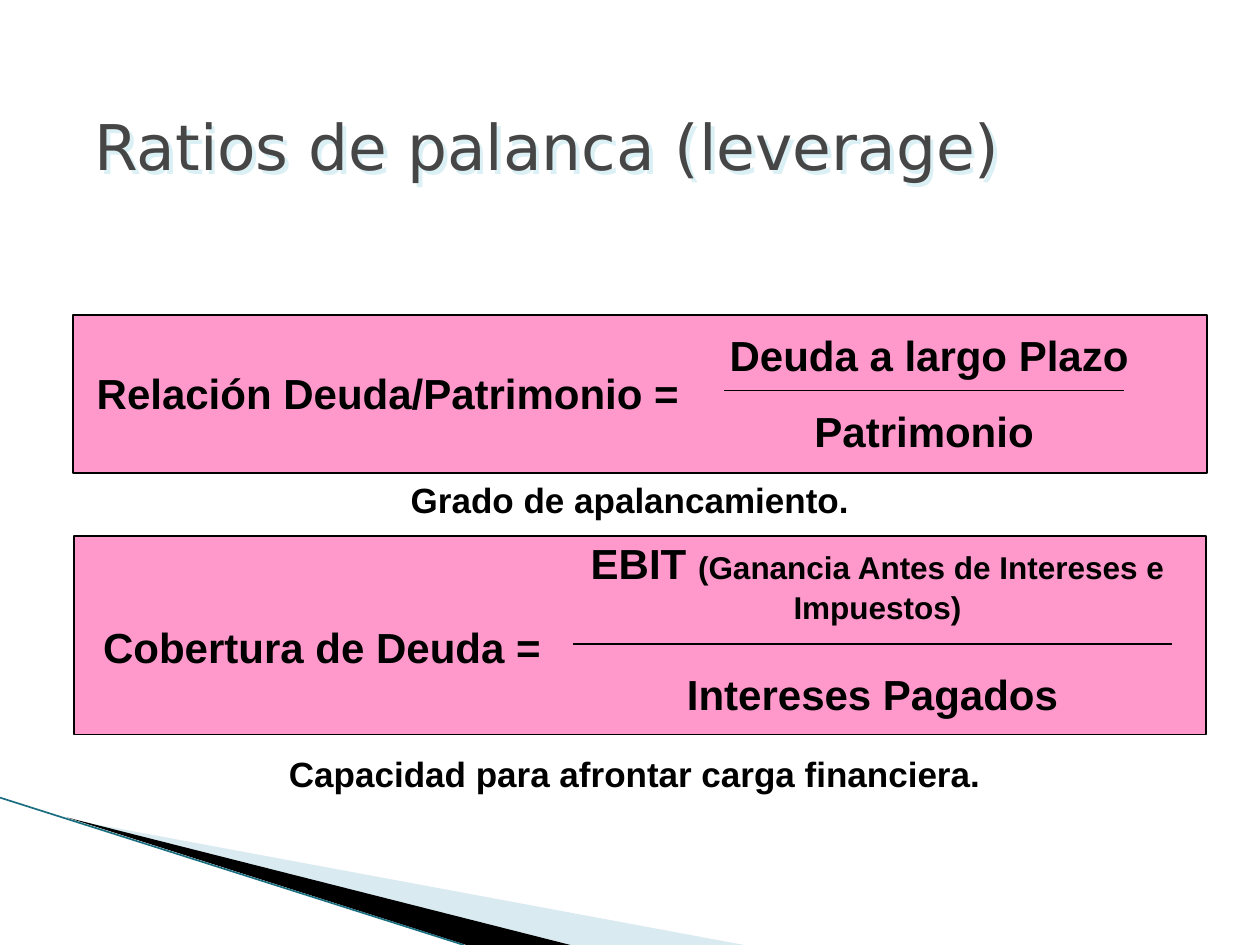
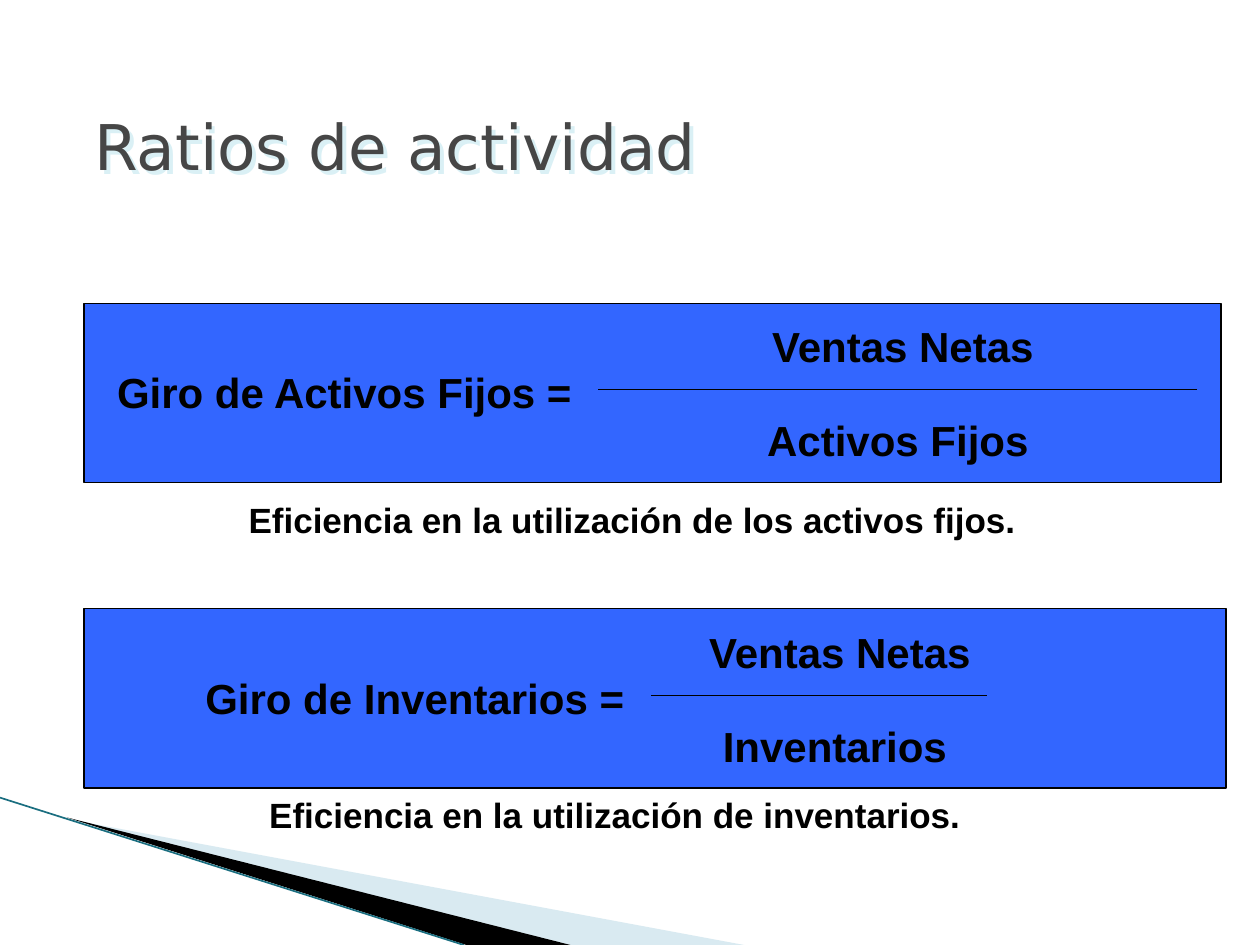
from lxml.etree import SubElement as Sub
from pptx import Presentation
from pptx.dml.color import RGBColor as RGB
from pptx.enum.shapes import MSO_CONNECTOR as LINK, MSO_SHAPE as SHAPE
from pptx.enum.text import MSO_ANCHOR as ANCHOR, MSO_AUTO_SIZE as AUTO, PP_ALIGN as ALIGN
from pptx.oxml.ns import qn
from pptx.util import Cm, Pt

BLACK = RGB(0, 0, 0)
GREY = RGB(0x46, 0x46, 0x46)
PINK = RGB(0xFF, 0x99, 0xCC)
BLUE = RGB(0x33, 0x66, 0xFF)
PALE = RGB(0xA0, 0xCB, 0xDC)
TEAL = RGB(0x1A, 0x6E, 0x80)
GLOW = "DAF0F5"

# Content, lengths in cm: card (left, top, width, height), bar (from, to, y),
# label left edge, fraction centre, rise and drop of its parts from the bar,
# note centre and top
SLIDES = [
    {"title": "Ratios de palanca (leverage)", "fill": PINK, "ratios": [
        {"label": "Relación Deuda/Patrimonio =", "left": 1.7,
         "over": [("Deuda a largo Plazo", 24)], "under": "Patrimonio",
         "card": (1.47, 6.35, 22.86, 3.18), "bar": (14.6, 22.66, 7.87),
         "mid": 18.73, "rise": 1.35, "drop": 0.18,
         "note": "Grado de apalancamiento.", "spot": (12.7, 9.53)},
        {"label": "Cobertura de Deuda =", "left": 1.83,
         "over": [("EBIT ", 24), ("(Ganancia Antes de Intereses e Impuestos)", 18)],
         "under": "Intereses Pagados",
         "card": (1.5, 10.8, 22.81, 4.01), "bar": (11.56, 23.62, 12.98),
         "mid": 17.69, "rise": 2.26, "drop": 0.38,
         "note": "Capacidad para afrontar carga financiera.", "spot": (12.8, 15.04)},
    ]},
    {"title": "Ratios de actividad", "fill": BLUE, "ratios": [
        {"label": "Giro de Activos Fijos =", "left": 2.11,
         "over": [("Ventas Netas", 24)], "under": "Activos Fijos",
         "card": (1.7, 6.12, 22.91, 3.61), "bar": (12.06, 24.13, 7.85),
         "mid": 18.2, "rise": 1.52, "drop": 0.38,
         "note": "Eficiencia en la utilización de los activos fijos.",
         "spot": (12.75, 9.93)},
        {"label": "Giro de Inventarios =", "left": 3.89,
         "over": [("Ventas Netas", 24)], "under": "Inventarios",
         "card": (1.7, 12.27, 23.01, 3.61), "bar": (13.13, 19.89, 14.02),
         "mid": 16.93, "rise": 1.52, "drop": 0.38,
         "note": "Eficiencia en la utilización de inventarios.",
         "spot": (12.4, 15.88)},
    ]},
]
WEDGES = [
    (PALE, 40, [(1.4, 16.52), (15.0, 19.05), (11.5, 19.05)]),
    (BLACK, 100, [(1.35, 16.48), (11.5, 19.05), (9.4, 19.05)]),
]
EDGE = (0, 16.08, 9.35, 19.05)
TITLE = (1.65, 0.74, 23.11, 3.07)
FRAC_W, LABEL_W, NOTE_W = 12.27, 13.3, 22
LABEL_UP = 0.58  # label top above the bar
SHIFT = 0.1      # lower part sits slightly left of the upper one


def write(frame, runs, align=ALIGN.LEFT, font="Arial", color=BLACK, bold=True, space=None):
    """Fill a text frame with one paragraph of (text, size) runs."""
    frame.word_wrap = True
    para = frame.paragraphs[0]
    para.alignment = align
    if space:
        para.line_spacing = space
    for text, size in runs:
        run = para.add_run()
        run.text = text
        run.font.name, run.font.size, run.font.bold = font, Pt(size), bold
        run.font.color.rgb = color


def label(slide, runs, x, y, w, **style):
    box = slide.shapes.add_textbox(Cm(x), Cm(y), Cm(w), Cm(1.27))
    write(box.text_frame, runs, **style)


def centred(slide, runs, mid, y, w):
    label(slide, runs, mid - w / 2, y, w, align=ALIGN.CENTER)


def rule(slide, x1, y1, x2, y2, color, width):
    line = slide.shapes.add_connector(LINK.STRAIGHT, Cm(x1), Cm(y1), Cm(x2), Cm(y2))
    line.line.color.rgb = color
    line.line.width = Pt(width)
    Sub(line.element.spPr, qn("a:effectLst"))
    return line


def wedge(slide, color, alpha, points):
    (x, y), *rest = [(Cm(a), Cm(b)) for a, b in points]
    path = slide.shapes.build_freeform(x, y)
    path.add_line_segments(rest)
    shape = path.convert_to_shape()
    shape.shadow.inherit = False
    shape.line.fill.background()
    shape.fill.solid()
    shape.fill.fore_color.rgb = color
    tint = shape.element.spPr.find(".//" + qn("a:srgbClr"))
    Sub(tint, qn("a:alpha"), val=str(alpha * 1000))
    return shape


def decorate(slide, layout):
    """Build the corner bands and hand them to the shared layout."""
    parts = [wedge(slide, *item) for item in WEDGES]
    parts.append(rule(slide, *EDGE, TEAL, 0.95))
    for part in parts:
        layout.shapes.element.append(part.element)


def head(slide, text):
    title = slide.shapes.title
    frame = title.text_frame
    frame.auto_size = AUTO.NONE
    frame.vertical_anchor = ANCHOR.BOTTOM
    write(frame, [(text, 36)], font="DejaVu Sans", color=GREY, bold=False, space=0.8)
    glow = Sub(Sub(title.element.spPr, qn("a:effectLst")), qn("a:outerShdw"),
               dist="38100", dir="2700000", algn="tl")
    Sub(glow, qn("a:srgbClr"), val=GLOW)


def card(slide, place, fill):
    box = slide.shapes.add_shape(SHAPE.RECTANGLE, *map(Cm, place))
    box.shadow.inherit = False
    box.fill.solid()
    box.fill.fore_color.rgb = fill
    box.line.color.rgb = BLACK
    box.line.width = Pt(1)


def ratio(slide, item, fill):
    start, end, y = item["bar"]
    card(slide, item["card"], fill)
    label(slide, [(item["label"], 24)], item["left"], y - LABEL_UP, LABEL_W)
    centred(slide, item["over"], item["mid"], y - item["rise"], FRAC_W)
    centred(slide, [(item["under"], 24)], item["mid"] - SHIFT, y + item["drop"], FRAC_W)
    rule(slide, start, y, end, y, BLACK, 0.75)
    centred(slide, [(item["note"], 20)], *item["spot"], NOTE_W)


def main():
    deck = Presentation()
    deck.slide_width, deck.slide_height = Cm(25.4), Cm(19.05)

    # Shared layout: title place and corner bands
    layout = deck.slide_layouts[5]
    name, *extras = list(layout.placeholders)
    name.left, name.top, name.width, name.height = map(Cm, TITLE)
    for extra in extras:
        layout.shapes.element.remove(extra.element)

    # Slides
    for num, data in enumerate(SLIDES):
        slide = deck.slides.add_slide(layout)
        if num == 0:
            decorate(slide, layout)
        head(slide, data["title"])
        for item in data["ratios"]:
            ratio(slide, item, data["fill"])
    deck.save("out.pptx")


if __name__ == "__main__":
    main()
